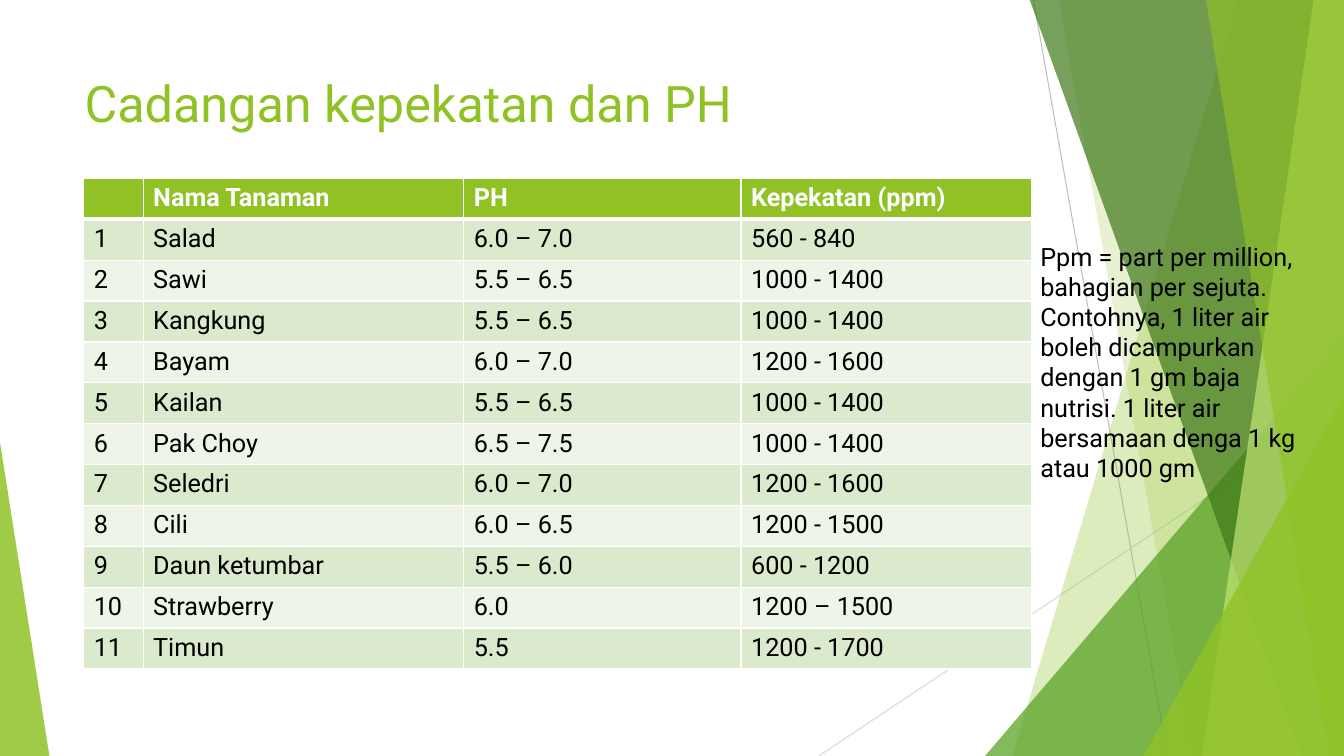
from lxml.etree import SubElement
from pptx import Presentation
from pptx.dml.color import RGBColor
from pptx.enum.shapes import MSO_CONNECTOR, MSO_SHAPE
from pptx.enum.text import MSO_ANCHOR
from pptx.oxml.ns import qn
from pptx.util import Inches, Pt

COLORS = {
    "lime": "90C226", "green": "54A021", "forest": "3F7819", "pale": "C0E474",
    "band_dark": "DBE9CD", "band_light": "EEF4E8", "white": "FFFFFF",
    "black": "000000", "gray": "BFBFBF", "light_gray": "D9D9D9",
}
FONT = "Roboto"
WIDTH, HEIGHT, TOP = 13.33, 7.5, -0.01

HEADER = ("", "Nama Tanaman", "PH", "Kepekatan (ppm)")
PLANTS = [
    ("Salad", "6.0 – 7.0", "560 - 840"),
    ("Sawi", "5.5 – 6.5", "1000 - 1400"),
    ("Kangkung", "5.5 – 6.5", "1000 - 1400"),
    ("Bayam", "6.0 – 7.0", "1200 - 1600"),
    ("Kailan", "5.5 – 6.5", "1000 - 1400"),
    ("Pak Choy", "6.5 – 7.5", "1000 - 1400"),
    ("Seledri", "6.0 – 7.0", "1200 - 1600"),
    ("Cili", "6.0 – 6.5", "1200 - 1500"),
    ("Daun ketumbar", "5.5 – 6.0", "600 - 1200"),
    ("Strawberry", "6.0", "1200 – 1500"),
    ("Timun", "5.5", "1200 - 1700"),
]
COLUMN_WIDTHS = (0.59, 3.18, 2.75, 2.88)
NOTE = (
    "Ppm = part per million, bahagian per sejuta.",
    "Contohnya, 1 liter air boleh dicampurkan dengan 1 gm baja nutrisi. "
    "1 liter air bersamaan denga 1 kg atau 1000 gm",
)


def rgb(name):
    return RGBColor.from_string(COLORS[name])


def paint(sp, color, opacity):
    """Fill a shape with a see-through colour, without outline or shadow."""
    sp.shadow.inherit = False
    sp.line.fill.background()
    sp.fill.solid()
    sp.fill.fore_color.rgb = rgb(color)
    clr = sp.fill._xPr.find(qn("a:solidFill"))[0]
    SubElement(clr, qn("a:alpha"), val=str(opacity * 1000))


def add_line(s, start, end, color):
    line = s.shapes.add_connector(
        MSO_CONNECTOR.STRAIGHT, *(Inches(v) for v in start + end))
    line.line.color.rgb = rgb(color)
    line.line.width = Pt(0.75)
    SubElement(line._element.spPr, qn("a:effectLst"))


def add_edge_panel(s, top_x, bottom_x, color, opacity):
    """Draw a full-height panel from a slanted left side to the right slide edge."""
    corners = [(top_x, TOP), (WIDTH, TOP), (WIDTH, HEIGHT), (bottom_x, HEIGHT)]
    points = [(Inches(x), Inches(y)) for x, y in corners]
    fb = s.shapes.build_freeform(*points[0])
    fb.add_line_segments(points[1:], close=True)
    paint(fb.convert_to_shape(), color, opacity)


def add_triangle(s, box, apex, color, opacity):
    sp = s.shapes.add_shape(
        MSO_SHAPE.ISOSCELES_TRIANGLE, *(Inches(v) for v in box))
    sp.adjustments[0] = apex
    paint(sp, color, opacity)


def write(p, text, color, size=18, bold=False):
    r = p.add_run()
    r.text = text
    for name, value in {"name": FONT, "size": Pt(size), "bold": bold}.items():
        setattr(r.font, name, value)
    r.font.color.rgb = rgb(color)


def add_text(s, box, paragraphs, color, size=18):
    tf = s.shapes.add_textbox(*(Inches(v) for v in box)).text_frame
    tf.word_wrap = True
    tf.vertical_anchor = MSO_ANCHOR.TOP
    for i, text in enumerate(paragraphs):
        p = tf.add_paragraph() if i else tf.paragraphs[0]
        write(p, text, color, size)


def set_borders(cell, widths):
    tcPr = cell._tc.get_or_add_tcPr()
    for side, width in widths.items():
        ln = SubElement(tcPr, qn(f"a:ln{side}"), w=str(Pt(width)))
        fill = SubElement(ln, qn("a:solidFill"))
        SubElement(fill, qn("a:srgbClr"), val=COLORS["white"])


def add_plant_table(s):
    rows = [HEADER] + [(str(n), *plant) for n, plant in enumerate(PLANTS, 1)]
    box = (0.83, 1.77, sum(COLUMN_WIDTHS), 4.87)
    table = s.shapes.add_table(
        len(rows), len(HEADER), *(Inches(v) for v in box)).table
    for column, width in zip(table.columns, COLUMN_WIDTHS):
        column.width = Inches(width)
    for i, row in enumerate(rows):
        is_header = i == 0
        fill = "lime" if is_header else "band_dark" if i % 2 else "band_light"
        color = "white" if is_header else "black"
        borders = {"L": 1, "R": 1, "T": 3 if i == 1 else 1,
                   "B": 3 if is_header else 1}
        for j, text in enumerate(row):
            cell = table.cell(i, j)
            set_borders(cell, borders)
            cell.fill.solid()
            cell.fill.fore_color.rgb = rgb(fill)
            if text:
                write(cell.text_frame.paragraphs[0], text, color, bold=is_header)


def add_backdrop(s):
    add_line(s, (10.25, 0), (11.58, HEIGHT), "gray")
    add_line(s, (WIDTH, 4.03), (8.12, HEIGHT), "light_gray")
    add_edge_panel(s, 12.28, 10.04, "lime", 30)
    add_edge_panel(s, 10.5, 11.83, "lime", 20)
    add_triangle(s, (9.77, 3.33, 3.56, 4.17), 1, "green", 72)
    add_edge_panel(s, 10.21, 12.91, "forest", 70)
    add_edge_panel(s, 13.03, 11.92, "pale", 70)
    add_edge_panel(s, 11.96, 13.18, "lime", 65)
    add_triangle(s, (11.34, 3.93, 1.99, 3.57), 1, "lime", 80)
    add_triangle(s, (0, 4.39, 0.49, 3.11), 0, "lime", 85)


def main():
    prs = Presentation()
    prs.slide_width, prs.slide_height = Inches(WIDTH), Inches(HEIGHT)
    s = prs.slides.add_slide(prs.slide_layouts[6])
    add_backdrop(s)
    add_text(s, (0.74, 0.67, 9.4, 1.44), ["Cadangan kepekatan dan PH"], "lime", 36)
    add_plant_table(s)
    add_text(s, (10.22, 2.34, 2.84, 2.83), NOTE, "black")
    prs.save("out.pptx")


if __name__ == "__main__":
    main()
